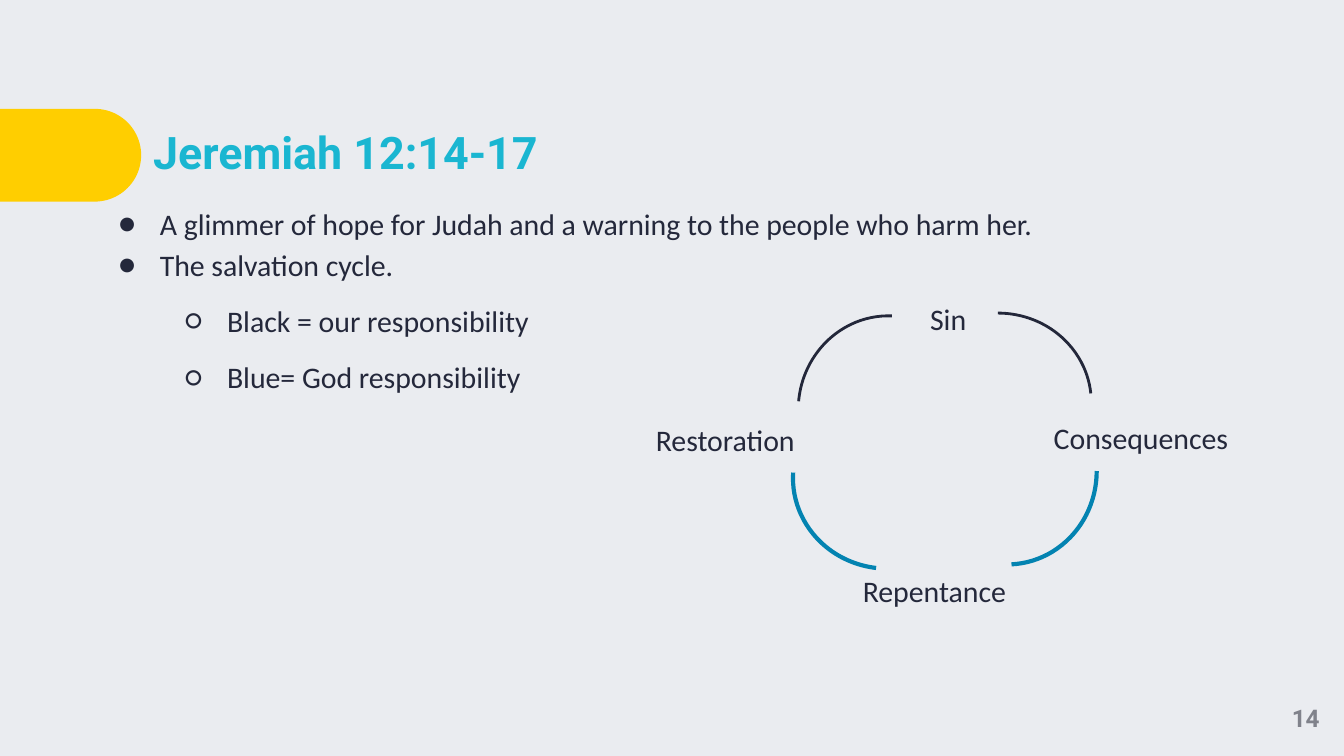
from lxml import etree
from pptx import Presentation
from pptx import util as u
from pptx.dml.color import RGBColor
from pptx.enum import shapes, text
from pptx.oxml.ns import qn

BACKGROUND = RGBColor(0xEA, 0xEC, 0xF0)
YELLOW = RGBColor(0xFF, 0xCE, 0x00)
TURQUOISE = RGBColor(0x1A, 0xB6, 0xD1)
INK = RGBColor(0x24, 0x28, 0x3B)
BLACK = RGBColor(0x23, 0x27, 0x3A)
BLUE = RGBColor(0x03, 0x83, 0xB1)
GREY = RGBColor(0x80, 0x82, 0x8B)

BODY = {"name": "Calibri", "size": u.Pt(16), "bold": False}
HEADING = {"name": "Roboto", "size": u.Pt(24), "bold": True}
NUMBER = {"name": "Roboto", "size": u.Pt(13), "bold": True}


def place(box, left, top, width, height, anchor=text.MSO_ANCHOR.TOP):
    """Position a text holder and remove its insets."""
    box.left, box.top = u.Inches(left), u.Inches(top)
    box.width, box.height = u.Inches(width), u.Inches(height)
    frame = box.text_frame
    frame.word_wrap = True
    frame.auto_size = text.MSO_AUTO_SIZE.NONE
    frame.vertical_anchor = anchor
    for side in ("left", "top", "right", "bottom"):
        setattr(frame, f"margin_{side}", 0)
    return frame


def write(paragraph, words, style, color, spacing, align=text.PP_ALIGN.LEFT):
    """Fill one paragraph with a formatted run."""
    paragraph.alignment = align
    paragraph.line_spacing = spacing
    run = paragraph.add_run()
    run.text = words
    for attribute, value in style.items():
        setattr(run.font, attribute, value)
    run.font.color.rgb = color


# Widescreen slide, 16:9
prs = Presentation()
prs.slide_width, prs.slide_height = u.Inches(10), u.Inches(10 * 9 / 16)
slide = prs.slides.add_slide(prs.slide_layouts[5])
slide.background.fill.solid()
slide.background.fill.fore_color.rgb = BACKGROUND

# Yellow tab on the left edge
tab = slide.shapes.add_shape(
    shapes.MSO_SHAPE.ROUND_2_SAME_RECTANGLE,
    u.Inches(0.18), u.Inches(0.63), u.Inches(0.69), u.Inches(1.05))
tab.rotation = 90
tab.adjustments[0] = 0.5
tab.shadow.inherit = False
tab.fill.solid()
tab.fill.fore_color.rgb = YELLOW
tab.line.fill.background()

# Title
title = place(slide.shapes.title, 1.14, 0.81, 7.88, 0.69, text.MSO_ANCHOR.MIDDLE)
write(title.paragraphs[0], "Jeremiah 12:14-17", HEADING, TURQUOISE, 0.9)

# Bulleted points: level and wording
points = place(slide.shapes.add_textbox(0, 0, 0, 0), 0.88, 1.49, 8.23, 3.75)
for i, (level, words) in enumerate([
    (0, "A glimmer of hope for Judah and a warning to the people who harm her."),
    (0, "The salvation cycle."),
    (1, "Black = our responsibility"),
    (1, "Blue= God responsibility"),
]):
    point = points.add_paragraph() if i else points.paragraphs[0]
    point.level = level
    properties = point._p.get_or_add_pPr()
    properties.set("marL", str(u.Inches(0.31 + 0.5 * level)))
    properties.set("indent", str(-u.Inches(0.31)))
    bullet_color = etree.SubElement(properties, qn("a:buClr"))
    etree.SubElement(bullet_color, qn("a:srgbClr"), val=str(INK))
    etree.SubElement(properties, qn("a:buFont"), typeface="Calibri")
    etree.SubElement(properties, qn("a:buChar"), char="●○"[level])
    if level:
        point.space_before = u.Pt(8)
    write(point, words, BODY, INK, 1.15)

# Stages of the salvation cycle
for stage, left, top, width in [
    ("Sin", 6.92, 2.2, 0.32),
    ("Consequences", 7.84, 3.08, 1.51),
    ("Repentance", 6.42, 4.22, 1.24),
    ("Restoration", 4.88, 3.1, 1.51),
]:
    label = place(slide.shapes.add_textbox(0, 0, 0, 0), left, top, width, 0.35)
    write(label.paragraphs[0], stage, BODY, INK, 1.15)

# Arcs between the stages, clockwise from Sin
for left, top, turn, end, color, weight in [
    (6.73, 2.33, 0, 212.67, BLACK, 1.5),
    (6.8, 2.84, 90, 214.47, BLUE, 2.25),
    (5.9, 2.9, 186.6, 214.47, BLUE, 2.25),
    (5.91, 2.38, 275.1, 214.47, BLACK, 1.5),
]:
    arc = slide.shapes.add_shape(
        shapes.MSO_SHAPE.ARC,
        u.Inches(left), u.Inches(top), u.Inches(1.39), u.Inches(1.33))
    arc.rotation = turn
    arc.adjustments[0], arc.adjustments[1] = 162, end
    arc.shadow.inherit = False
    arc.fill.background()
    arc.line.color.rgb = color
    arc.line.width = u.Pt(weight)

# Slide number
number = place(slide.shapes.add_textbox(0, 0, 0, 0),
               9.43, 5.06, 0.57, 0.56, text.MSO_ANCHOR.MIDDLE)
write(number.paragraphs[0], "14", NUMBER, GREY, 1.0, text.PP_ALIGN.CENTER)

prs.save("out.pptx")
